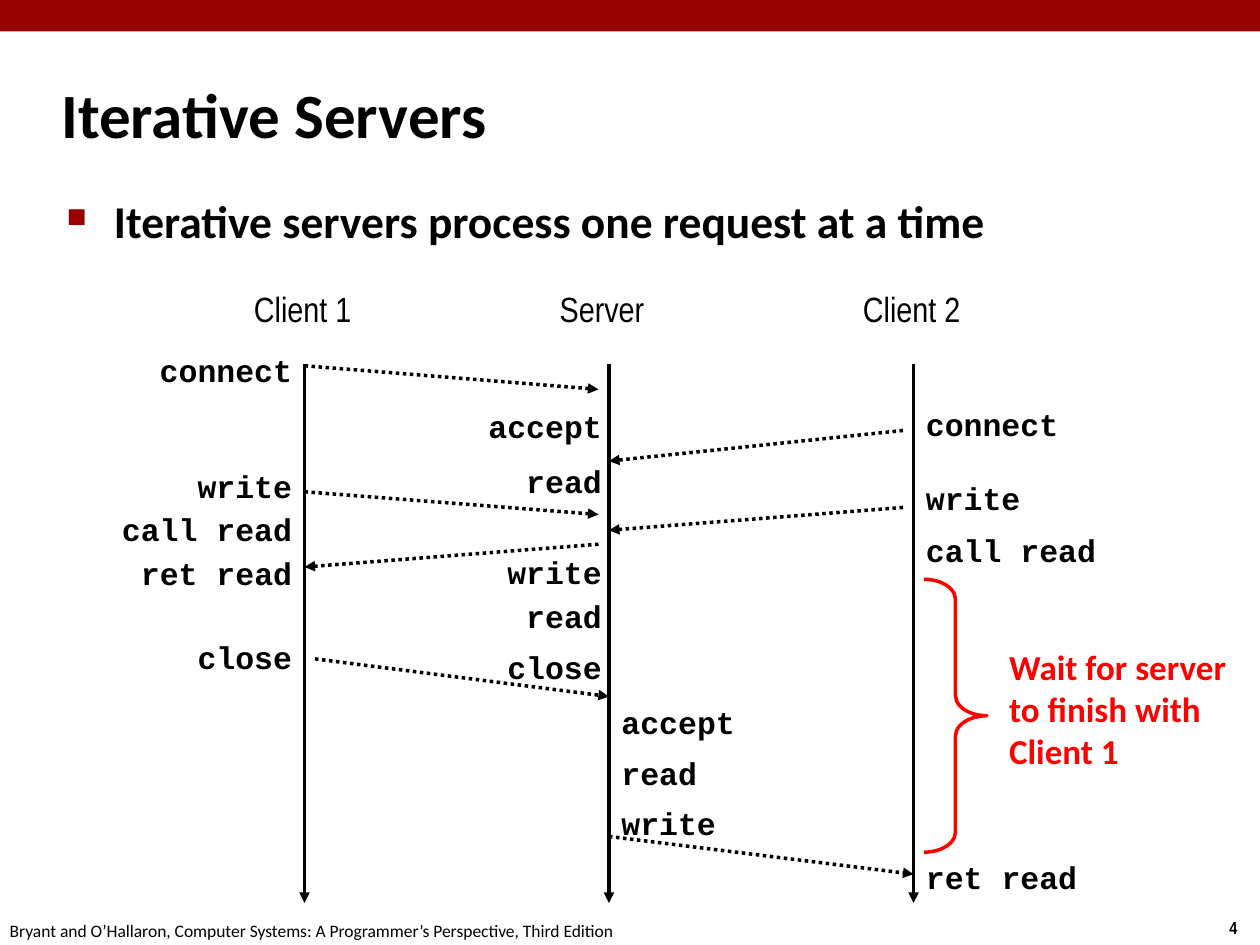
from dataclasses import dataclass

from lxml.etree import SubElement
from pptx import Presentation
from pptx.dml.color import RGBColor
from pptx.enum.dml import MSO_LINE
from pptx.enum.shapes import MSO_CONNECTOR, MSO_SHAPE
from pptx.enum.text import MSO_ANCHOR, PP_ALIGN
from pptx.oxml.ns import qn
from pptx.util import Pt


@dataclass(frozen=True)
class Theme:
    """Colours, fonts and sizes of the slide."""
    ink: RGBColor = RGBColor(0, 0, 0)
    brand: RGBColor = RGBColor(0x99, 0, 0)
    alert: RGBColor = RGBColor(0xFF, 0, 0)
    body: str = "Calibri"
    narrow: str = "Arial Narrow"
    code: str = "Courier New"
    title_size: int = 36
    bullet_size: int = 26
    label_size: int = 20
    code_size: int = 18
    small_size: int = 10
    line: int = 2


T = Theme()


def add_text(s, box, text, font, size, color=T.ink, bold=True, align=PP_ALIGN.LEFT, wrap=True):
    """Add a text box in one style and return its shape."""
    sp = s.shapes.add_textbox(*map(Pt, box))
    tf = sp.text_frame
    tf.word_wrap = wrap
    p = tf.paragraphs[0]
    p.text = text
    p.alignment = align
    f = p.runs[0].font
    f.name, f.size, f.bold, f.color.rgb = font, Pt(size), bold, color
    return sp


def hang(p, indent):
    """Give a paragraph a hanging indent and return its properties."""
    pPr = p._p.get_or_add_pPr()
    pPr.set("marL", str(Pt(indent)))
    pPr.set("indent", str(Pt(-indent)))
    return pPr


def add_arrow(s, x1, y1, x2, y2, dash=None):
    """Add a straight arrow with a triangle at its end."""
    c = s.shapes.add_connector(MSO_CONNECTOR.STRAIGHT, *map(Pt, (x1, y1, x2, y2)))
    c.line.color.rgb = T.ink
    c.line.width = Pt(T.line)
    if dash:
        c.line.dash_style = dash
    SubElement(c.line._get_or_add_ln(), qn("a:tailEnd"), type="triangle")
    SubElement(c._element.spPr, qn("a:effectLst"))


def add_banner(s, x, y, w, h):
    """Add the coloured band."""
    sp = s.shapes.add_shape(MSO_SHAPE.RECTANGLE, *map(Pt, (x, y, w, h)))
    sp.shadow.inherit = False
    sp.fill.solid()
    sp.fill.fore_color.rgb = T.brand
    sp.line.fill.background()


def add_title(s, x, y, w, h):
    """Add the slide title."""
    tf = add_text(s, (x, y, w, h), "Iterative Servers", T.body, T.title_size).text_frame
    tf.vertical_anchor = MSO_ANCHOR.MIDDLE
    hang(tf.paragraphs[0], 9.5)


def add_bullet(s, x, y, w, h):
    """Add the bulleted statement."""
    sp = add_text(s, (x, y, w, h), "Iterative servers process one request at a time",
                  T.body, T.bullet_size)
    pPr = hang(sp.text_frame.paragraphs[0], 27)
    before = SubElement(pPr, qn("a:spcBef"))
    SubElement(before, qn("a:spcPct"), val="20000")
    color = SubElement(pPr, qn("a:buClr"))
    SubElement(color, qn("a:srgbClr"), val=str(T.brand))
    SubElement(pPr, qn("a:buSzPct"), val="60000")
    SubElement(pPr, qn("a:buChar"), char="■")


def add_calls(s, edge, y, calls, align):
    """Add code labels whose right or left side lies on an edge."""
    for name, dy in calls:
        w = 10.8 * len(name) + 15
        x = edge - w if align == PP_ALIGN.RIGHT else edge
        add_text(s, (x, y + dy, w, 29), name, T.code, T.code_size, align=align, wrap=False)


def add_sequence(s, x, y, w, h):
    """Add the lifelines, their calls and the messages between them."""
    client1, server, client2 = x, x + w / 2, x + w
    for name, cx, label_x in (("Client 1", client1, client1 - 1),
                              ("Server", server, server - 4),
                              ("Client 2", client2, client2 - 1)):
        add_text(s, (label_x - 36, y, 72, 32), name, T.narrow, T.label_size,
                 bold=False, align=PP_ALIGN.CENTER, wrap=False)
        add_arrow(s, cx, y + 47, cx, y + h)

    gap = 6
    for x1, y1, x2, y2 in ((client1, 48, server - gap, 61.5),
                           (client2 - gap, 85, server, 102.5),
                           (client1, 120, server - gap, 133),
                           (client2 - gap, 129, server, 142),
                           (server - gap, 150, client1, 163),
                           (client1 + gap, 215.5, server, 237),
                           (server, 317, client2, 338.5)):
        add_arrow(s, x1, y + y1, x2, y + y2, MSO_LINE.ROUND_DOT)

    add_calls(s, client1, y, (("connect", 36), ("write", 102.5), ("call read", 127),
                              ("ret read", 152), ("close", 200)), PP_ALIGN.RIGHT)
    add_calls(s, server + 3, y, (("accept", 68), ("read", 99.5), ("write", 151.5),
                                 ("read", 176.5), ("close", 206)), PP_ALIGN.RIGHT)
    add_calls(s, server, y, (("accept", 237), ("read", 266.5), ("write", 295)), PP_ALIGN.LEFT)
    add_calls(s, client2, y, (("connect", 67), ("write", 109), ("call read", 139),
                              ("ret read", 325.5)), PP_ALIGN.LEFT)


def add_wait(s, x, y, w, h):
    """Add the brace and the note on the waiting time."""
    sp = s.shapes.add_shape(MSO_SHAPE.RIGHT_BRACE, *map(Pt, (x, y, 36, h)))
    sp.shadow.inherit = False
    sp.adjustments[0] = 0.32
    sp.fill.background()
    sp.line.color.rgb = T.alert
    sp.line.width = Pt(T.line)
    note_x = 41.5
    add_text(s, (x + note_x, y + 34.5, w - note_x, 80), "Wait for server to finish with Client 1",
             T.body, T.label_size, T.alert)


def add_footer(s, x, y, w, h):
    """Add the source line and the slide number."""
    add_text(s, (x, y, 366, h),
             "Bryant and O’Hallaron, Computer Systems: A Programmer’s Perspective, Third Edition",
             T.body, T.small_size, bold=False, wrap=False)
    add_text(s, (x + w - 24.5, y - 1.5, 24.5, h), "4", T.narrow, T.small_size, wrap=False)


def main():
    """Build and save the slide."""
    prs = Presentation()
    prs.slide_width, prs.slide_height = Pt(720), Pt(540)
    s = prs.slides.add_slide(prs.slide_layouts[6])
    add_banner(s, 0, 0, 720, 18)
    add_footer(s, -1.5, 522, 721.5, 19.5)
    add_title(s, 28, 34.5, 598, 60)
    add_bullet(s, 31, 107, 622, 392)
    add_sequence(s, 174, 161, 348, 355)
    add_wait(s, 528, 331, 192, 156)
    prs.save("out.pptx")


if __name__ == "__main__":
    main()
